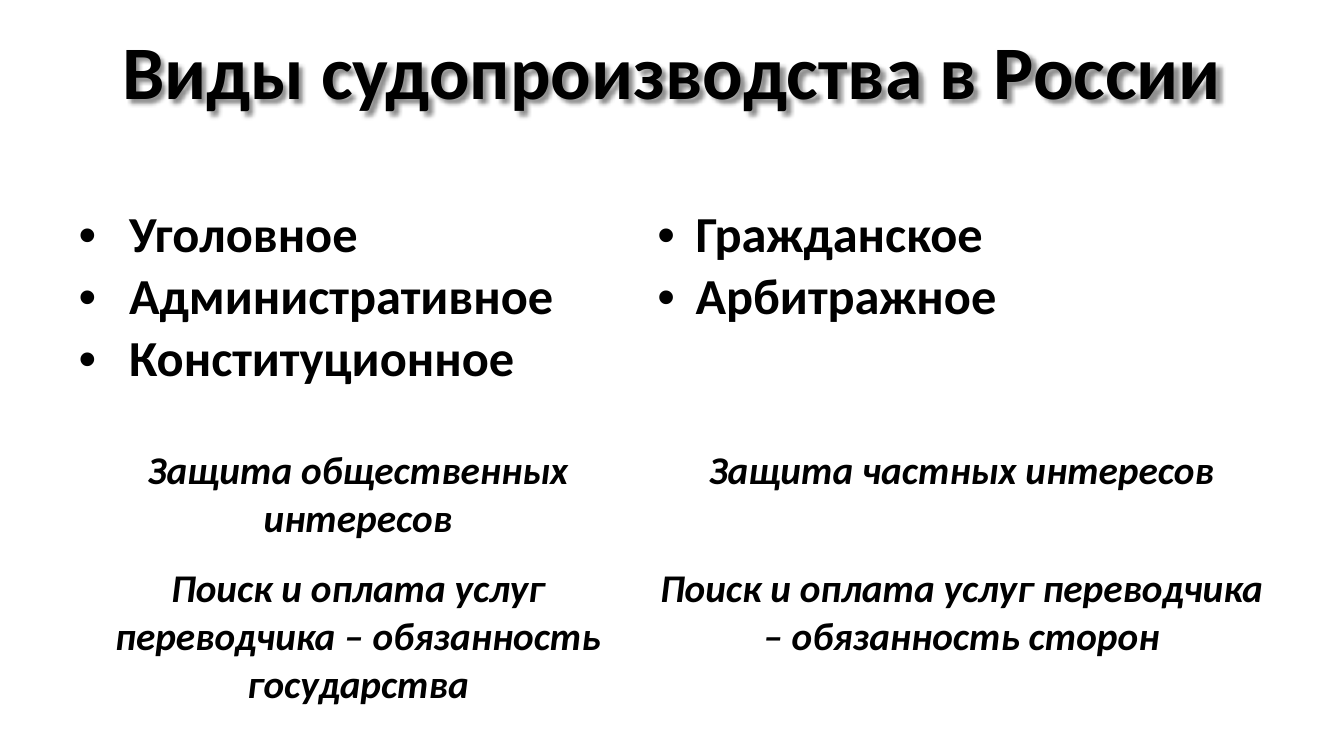
from dataclasses import dataclass

from lxml.etree import SubElement
from pptx import Presentation
from pptx.dml.color import RGBColor
from pptx.enum.text import MSO_ANCHOR, PP_ALIGN
from pptx.oxml.ns import qn
from pptx.util import Inches, Pt


@dataclass(frozen=True)
class Theme:
    font: str = "Calibri"
    ink: str = "000000"
    border: str = "FFFFFF"
    title_size: int = 54
    kind_size: int = 36
    note_size: int = 28


THEME = Theme()
SLIDE_W, SLIDE_H = 13.33, 7.5
COLUMN_WIDTHS = (5.74, 6.23)
ROW_HEIGHT = 1.64

# Each column: kinds of proceedings, bullet indent, protected interest, translator duty
COLUMNS = (
    (("Уголовное", "Административное", "Конституционное"), 0.5,
     "Защита общественных интересов",
     "Поиск и оплата услуг переводчика – обязанность государства"),
    (("Гражданское", "Арбитражное"), 0.38,
     "Защита частных интересов",
     "Поиск и оплата услуг переводчика – обязанность сторон"),
)


def write(frame, *lines, size, italic=False, align=PP_ALIGN.LEFT,
          bullet_indent=None, line_spacing=None):
    """Write each line as one bold paragraph."""
    frame.word_wrap = True
    for index, line in enumerate(lines):
        paragraph = frame.paragraphs[0] if index == 0 else frame.add_paragraph()
        paragraph.alignment = align
        if line_spacing:
            paragraph.line_spacing = line_spacing
        if bullet_indent:
            add_bullet(paragraph, bullet_indent)
        run = paragraph.add_run()
        run.text = line
        run.font.name = THEME.font
        run.font.size = Pt(size)
        run.font.bold = True
        run.font.italic = italic
        run.font.color.rgb = RGBColor.from_string(THEME.ink)


def add_bullet(paragraph, indent):
    properties = paragraph._p.get_or_add_pPr()
    properties.set("marL", str(Inches(indent)))
    properties.set("indent", str(-Inches(indent)))
    SubElement(properties, qn("a:buFont"), typeface="Arial")
    SubElement(properties, qn("a:buChar"), char="•")


def add_borders(cell, bottom=1):
    properties = cell._tc.get_or_add_tcPr()
    for side, width in (("L", 1), ("R", 1), ("T", 1), ("B", bottom)):
        line = SubElement(properties, qn(f"a:ln{side}"), w=str(Pt(width)))
        fill = SubElement(line, qn("a:solidFill"))
        SubElement(fill, qn("a:srgbClr"), val=THEME.border)


def add_soft_shadow(shape):
    effects = SubElement(shape._element.spPr, qn("a:effectLst"))
    shadow = SubElement(effects, qn("a:outerShdw"), blurRad=str(Pt(3)),
                        dist=str(Pt(3)), dir="2700000", algn="tl")
    color = SubElement(shadow, qn("a:srgbClr"), val=THEME.ink)
    SubElement(color, qn("a:alpha"), val="43000")


def add_title(slide, text):
    title = slide.shapes.title
    title.left, title.top = 0, Inches(0.29)
    title.width, title.height = Inches(SLIDE_W), Inches(1.11)
    title.fill.background()
    add_soft_shadow(title)
    title.text_frame.vertical_anchor = MSO_ANCHOR.TOP
    write(title.text_frame, text, size=THEME.title_size,
          align=PP_ALIGN.CENTER, line_spacing=0.9)


def add_proceedings_table(slide):
    table = slide.shapes.add_table(
        3, len(COLUMNS), Inches(0.68), Inches(1.98),
        Inches(sum(COLUMN_WIDTHS)), Inches(3 * ROW_HEIGHT)).table
    table.first_row = table.horz_banding = False
    for row in table.rows:
        row.height = Inches(ROW_HEIGHT)

    for column, (kinds, indent, interest, duty) in enumerate(COLUMNS):
        table.columns[column].width = Inches(COLUMN_WIDTHS[column])
        kinds_cell, interest_cell, duty_cell = (
            table.cell(row, column) for row in range(3))

        # Bulleted kinds of proceedings
        write(kinds_cell.text_frame, *kinds, size=THEME.kind_size,
              bullet_indent=indent)
        add_borders(kinds_cell, bottom=3)

        # Centred notes below; the interest sits one line lower in its row
        interest_cell.margin_top = Inches(0.52)
        for cell, note in ((interest_cell, interest), (duty_cell, duty)):
            write(cell.text_frame, note, size=THEME.note_size, italic=True,
                  align=PP_ALIGN.CENTER)
            add_borders(cell)

        for cell in (kinds_cell, interest_cell, duty_cell):
            cell.fill.background()


def main():
    deck = Presentation()
    deck.slide_width, deck.slide_height = Inches(SLIDE_W), Inches(SLIDE_H)
    slide = deck.slides.add_slide(deck.slide_layouts[5])
    add_title(slide, "Виды судопроизводства в России")
    add_proceedings_table(slide)
    deck.save("out.pptx")


if __name__ == "__main__":
    main()
